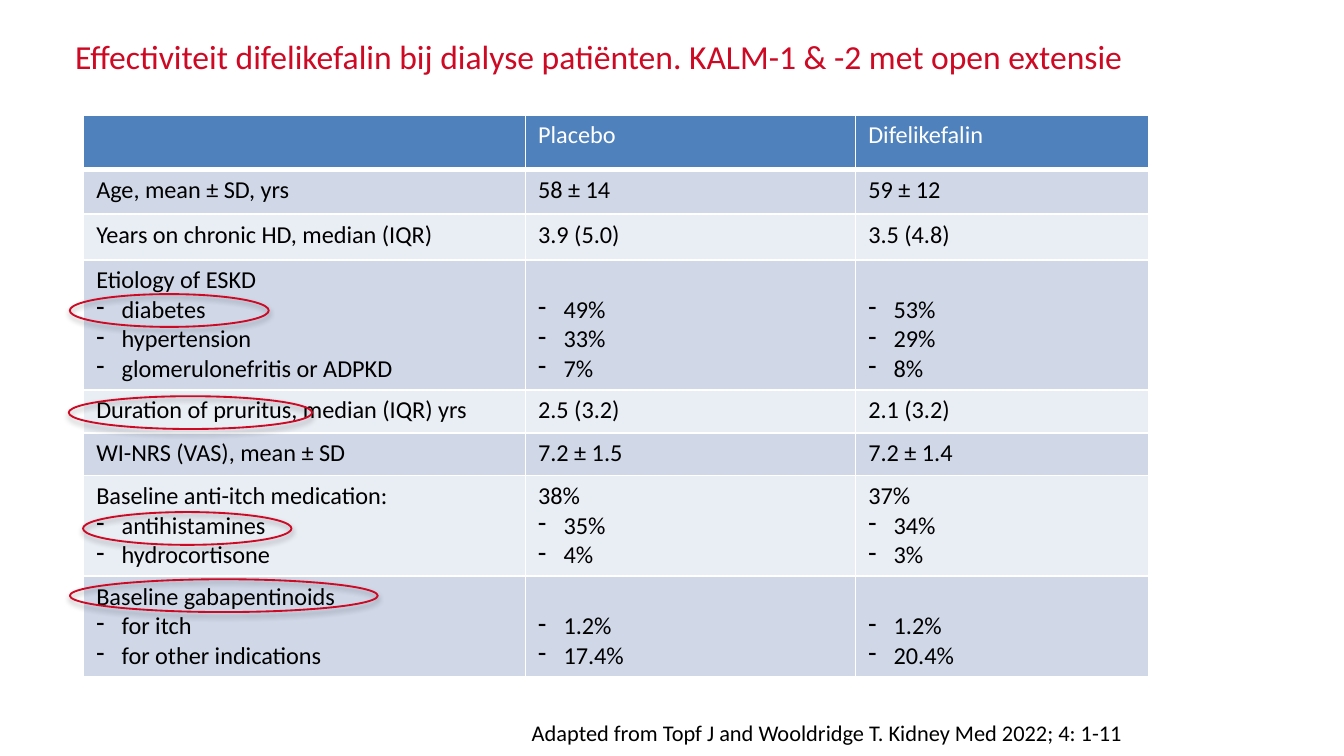
import pptx
import pptx.chart.data
import pptx.dml.color
import pptx.enum.shapes
import pptx.oxml
import pptx.oxml.ns
import pptx.util

Cm = pptx.util.Cm
Pt = pptx.util.Pt
RGB = pptx.dml.color.RGBColor

RED = RGB(0xCD, 0x09, 0x24)
BLUE = RGB(0x4F, 0x81, 0xBD)
DARK = RGB(0xD0, 0xD8, 0xE8)
LIGHT = RGB(0xE9, 0xED, 0xF4)
WHITE = RGB(0xFF, 0xFF, 0xFF)
BLACK = RGB(0, 0, 0)

FONT = "Calibri"
DASH = "- "
PAD = 0.11
LINE = 0.56
INDENT = Cm(0.48)
NS = pptx.oxml.ns.nsdecls("a")

COLS = (8.35, 6.24, 5.54)
# Row height in cm, then the cells; cells marked as lowered start a line down.
ROWS = (
    (1.04, False, ("", "Placebo", "Difelikefalin")),
    (0.84, False, ("Age, mean ± SD, yrs", "58 ± 14", "59 ± 12")),
    (0.86, False, ("Years on chronic HD, median (IQR)", "3.9 (5.0)", "3.5 (4.8)")),
    (2.46, True, ("Etiology of ESKD\n- diabetes\n- hypertension\n"
                  "- glomerulonefritis or ADPKD",
                  "- 49%\n- 33%\n- 7%", "- 53%\n- 29%\n- 8%")),
    (0.81, False, ("Duration of pruritus, median (IQR) yrs", "2.5 (3.2)", "2.1 (3.2)")),
    (0.81, False, ("WI-NRS (VAS), mean ± SD", "7.2 ± 1.5", "7.2 ± 1.4")),
    (1.9, False, ("Baseline anti-itch medication:\n- antihistamines\n- hydrocortisone",
                  "38%\n- 35%\n- 4%", "37%\n- 34%\n- 3%")),
    (1.9, True, ("Baseline gabapentinoids\n- for itch\n- for other indications",
                 "- 1.2%\n- 17.4%", "- 1.2%\n- 20.4%")),
)
# Left, top and width in cm
RINGS = ((1.32, 5.56, 3.76), (1.3, 7.49, 4.6), (1.57, 9.68, 3.94), (1.32, 10.95, 5.82))


def style(para, size, color):
    para.font.size = Pt(size)
    para.font.name = FONT
    para.font.bold = False
    para.font.color.rgb = color
    for run in para.runs:
        run.font.size = Pt(size)
        run.font.name = FONT
        run.font.color.rgb = color


def add_text(slide, text, place, size, color, wrap=True, space=None):
    box = slide.shapes.add_textbox(*map(Cm, place))
    box.text_frame.word_wrap = wrap
    box.text_frame.text = text
    para = box.text_frame.paragraphs[0]
    para.line_spacing = space
    style(para, size, color)


def add_dash(para):
    props = para._p.get_or_add_pPr()
    props.set("marL", str(INDENT))
    props.set("indent", str(-INDENT))
    props.append(pptx.oxml.parse_xml(f'<a:buChar {NS} char="-"/>'))


def add_edges(cell, head):
    props = cell._tc.get_or_add_tcPr()
    for side in "LRTB":
        width = Pt(3 if head and side == "B" else 1)
        props.append(pptx.oxml.parse_xml(
            f'<a:ln{side} {NS} w="{width}"><a:solidFill>'
            f'<a:srgbClr val="{WHITE}"/></a:solidFill></a:ln{side}>'))


def fill_cell(cell, text, row, lower):
    head = row == 0
    add_edges(cell, head)
    cell.fill.solid()
    cell.fill.fore_color.rgb = BLUE if head else DARK if row % 2 else LIGHT
    cell.margin_left = cell.margin_right = Cm(0.24)
    cell.margin_top = Cm(PAD + LINE if lower else PAD)
    cell.margin_bottom = Cm(PAD)
    lines = text.split("\n")
    cell.text_frame.text = "\n".join(line.removeprefix(DASH) for line in lines)
    for para, line in zip(cell.text_frame.paragraphs, lines):
        if line.startswith(DASH):
            add_dash(para)
        style(para, 13, WHITE if head else BLACK)


def add_grid(slide):
    high = sum(row[0] for row in ROWS)
    frame = slide.shapes.add_table(len(ROWS), len(COLS), Cm(1.58), Cm(2.17),
                                   Cm(sum(COLS)), Cm(high))
    table = frame.table
    for col, width in zip(table.columns, COLS):
        col.width = Cm(width)
    for r, (height, lower, texts) in enumerate(ROWS):
        table.rows[r].height = Cm(height)
        for c, text in enumerate(texts):
            fill_cell(table.cell(r, c), text, r, lower and c > 0)


def add_ring(slide, left, top, width):
    """Circle a term with a red outline and a soft shadow."""
    oval = pptx.enum.shapes.MSO_SHAPE.OVAL
    ring = slide.shapes.add_shape(oval, Cm(left), Cm(top), Cm(width), Cm(0.62))
    ring.fill.background()
    ring.line.color.rgb = RED
    ring.line.width = Pt(1)
    ring.shadow.inherit = False
    glow = ring._element.spPr.find(pptx.oxml.ns.qn("a:effectLst"))
    glow.append(pptx.oxml.parse_xml(
        f'<a:outerShdw {NS} blurRad="{Pt(3.1)}" dist="{Pt(1.8)}" dir="5400000" '
        f'rotWithShape="0"><a:srgbClr val="{BLACK}"><a:alpha val="35000"/>'
        '</a:srgbClr></a:outerShdw>'))


def main():
    deck = pptx.Presentation()
    deck.slide_width = Cm(25.4)
    deck.slide_height = Cm(14.29)
    slide = deck.slides.add_slide(deck.slide_layouts[6])
    add_text(slide, "Effectiviteit difelikefalin bij dialyse patiënten. "
             "KALM-1 & -2 met open extensie",
             (1.17, 0.18, 23.16, 1.3), 18, RED, space=1.5)
    add_grid(slide)
    add_text(slide, "Adapted from Topf J and Wooldridge T. Kidney Med 2022; 4: 1-11",
             (9.8, 13.46, 11.71, 0.76), 12, BLACK, wrap=False)
    for ring in RINGS:
        add_ring(slide, *ring)
    deck.save("out.pptx")


if __name__ == "__main__":
    main()
